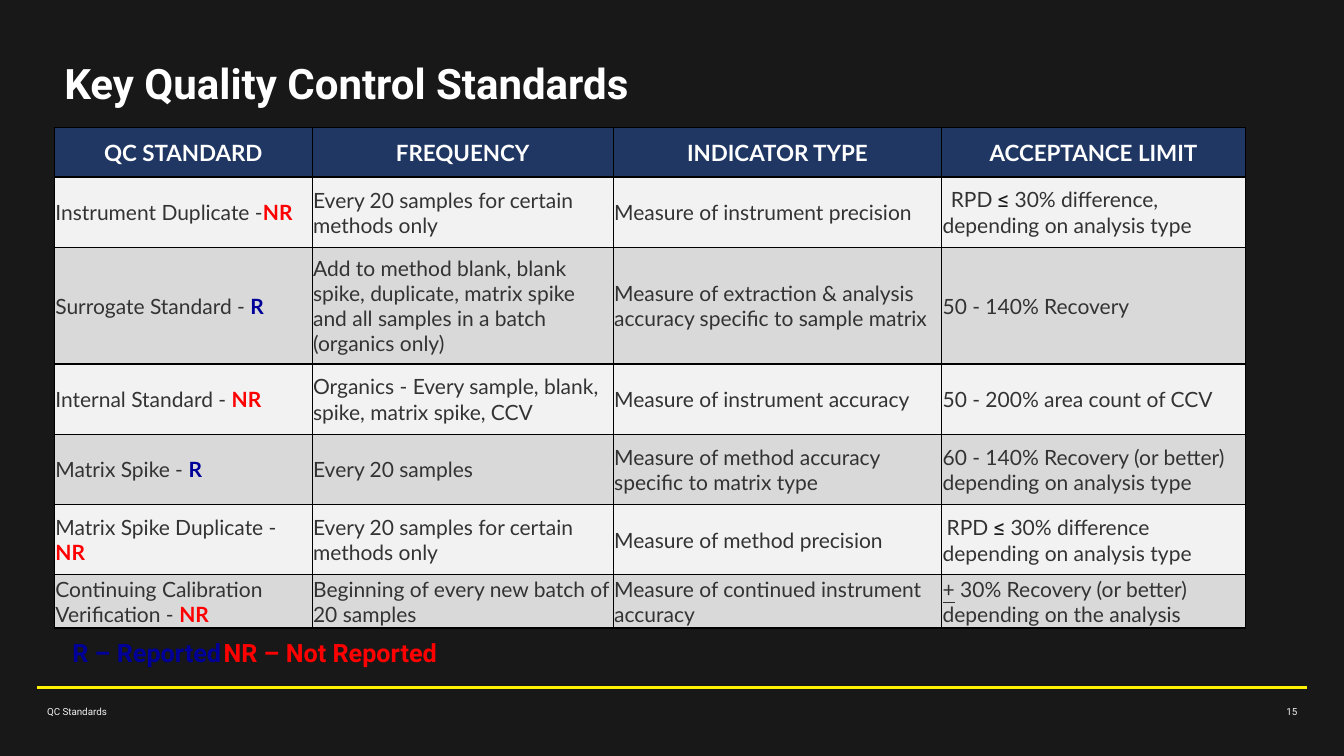
from pptx import Presentation
from pptx.dml.color import RGBColor
from pptx.enum.shapes import MSO_CONNECTOR
from pptx.enum.text import MSO_ANCHOR as Anchor, MSO_AUTO_SIZE as AutoSize, PP_ALIGN as Align
from pptx.oxml.ns import qn
from pptx.util import Pt
from lxml.etree import SubElement

HEADINGS = ["QC STANDARD", "FREQUENCY", "INDICATOR TYPE", "ACCEPTANCE LIMIT"]
COLUMN_WIDTHS = [184.1, 215.1, 234.6, 216.9]
ROW_HEIGHTS = [35.3, 50.2, 83.3, 50.2, 50.2, 50.2, 38.2]

# Text styles
BODY = {"name": "Lato", "size": 15, "bold": False, "color": "333333"}
HEADING = BODY | {"size": 16, "bold": True, "color": "FFFFFF"}
REPORTED = BODY | {"bold": True, "color": "000099"}
NOT_REPORTED = REPORTED | {"color": "FF0000"}
SYMBOL = {"name": "Roboto", "size": 16, "bold": False, "color": "181818"}
UNDERLINED = BODY | {"underline": True}
TITLE = {"name": "Roboto", "size": 30, "bold": True, "color": "FFFFFF"}
FOOTER = {"name": "Roboto", "size": 7, "color": "F2F2F2"}
LEGEND = TITLE | {"size": 18}
STATUS = {"R": REPORTED, "NR": NOT_REPORTED}


def rpd_limit(ending):
    return [("RPD ", BODY), ("≤", SYMBOL), (" 30% difference" + ending, BODY)]


# Standard, status, frequency, indicator, limit runs, first-line indent of the limit
STANDARDS = [
    ("Instrument Duplicate -", "NR", "Every 20 samples for certain methods only",
     "Measure of instrument precision", rpd_limit(", depending on analysis type"), 5.8),
    ("Surrogate Standard - ", "R",
     "Add to method blank, blank spike, duplicate, matrix spike and all samples in a batch (organics only)",
     "Measure of extraction & analysis accuracy specific to sample matrix",
     [("50 - 140% Recovery", BODY)], 0),
    ("Internal Standard - ", "NR", "Organics - Every sample, blank, spike, matrix spike, CCV",
     "Measure of instrument accuracy", [("50 - 200% area count of CCV", BODY)], 0),
    ("Matrix Spike - ", "R", "Every 20 samples",
     "Measure of method accuracy specific to matrix type",
     [("60 - 140% Recovery (or better) depending on analysis type", BODY)], 0),
    ("Matrix Spike Duplicate - ", "NR", "Every 20 samples for certain methods only",
     "Measure of method precision", rpd_limit(" depending on analysis type"), 2.9),
    ("Continuing Calibration Verification - ", "NR", "Beginning of every new batch of 20 samples",
     "Measure of continued instrument accuracy",
     [("+", UNDERLINED), (" 30% Recovery (or better) depending on the analysis", BODY)], 0),
]


def rgb(color):
    return RGBColor.from_string(color)


class SlideBuilder:
    background = "181818"
    accent = "FFF200"
    header_fill = "203764"
    row_fills = ("F2F2F2", "D9D9D9")
    border = "000000"

    def __init__(self, presentation):
        self.slide = presentation.slides.add_slide(presentation.slide_layouts[6])
        fill = self.slide.background.fill
        fill.solid()
        fill.fore_color.rgb = rgb(self.background)

    def add_runs(self, paragraph, runs, indent=0, **settings):
        for key, value in settings.items():
            setattr(paragraph, key, value)
        if indent:
            properties = paragraph._p.get_or_add_pPr()
            properties.set("marL", "0")
            properties.set("indent", str(Pt(indent)))
        for text, style in runs:
            run = paragraph.add_run()
            run.text = text
            for key, value in style.items():
                if key == "color":
                    run.font.color.rgb = rgb(value)
                else:
                    setattr(run.font, key, Pt(value) if key == "size" else value)

    def text(self, left, top, width, height, runs, frame=None, **settings):
        shape = self.slide.shapes.add_textbox(Pt(left), Pt(top), Pt(width), Pt(height))
        text_frame = shape.text_frame
        for key, value in ({"word_wrap": True} | (frame or {})).items():
            setattr(text_frame, key, value)
        self.add_runs(text_frame.paragraphs[0], runs, **settings)

    def rule(self, left, right, top, weight):
        line = self.slide.shapes.add_connector(
            MSO_CONNECTOR.STRAIGHT, Pt(left), Pt(top), Pt(right), Pt(top))
        line.line.color.rgb = rgb(self.accent)
        line.line.width = Pt(weight)
        SubElement(line._element.spPr, qn("a:effectLst"))

    def cell(self, cell, fill, runs, **settings):
        properties = cell._tc.get_or_add_tcPr()
        for side in ("lnL", "lnR", "lnT", "lnB"):
            edge = SubElement(properties, qn("a:" + side), w=str(Pt(1)))
            SubElement(SubElement(edge, qn("a:solidFill")), qn("a:srgbClr"), val=self.border)
        cell.fill.solid()
        cell.fill.fore_color.rgb = rgb(fill)
        layout = {"margin_left": Pt(0.7), "margin_right": Pt(0.7), "margin_top": Pt(0.7),
                  "margin_bottom": 0, "vertical_anchor": Anchor.MIDDLE}
        for key, value in layout.items():
            setattr(cell, key, value)
        self.add_runs(cell.text_frame.paragraphs[0], runs, **settings)

    def table(self, left, top):
        table = self.slide.shapes.add_table(
            len(ROW_HEIGHTS), len(COLUMN_WIDTHS), Pt(left), Pt(top),
            Pt(sum(COLUMN_WIDTHS)), Pt(sum(ROW_HEIGHTS))).table
        table.horz_banding = False
        for column, width in zip(table.columns, COLUMN_WIDTHS):
            column.width = Pt(width)
        for row, height in zip(table.rows, ROW_HEIGHTS):
            row.height = Pt(height)
        for index, heading in enumerate(HEADINGS):
            self.cell(table.cell(0, index), self.header_fill, [(heading, HEADING)],
                      alignment=Align.CENTER)
        for row, (name, status, frequency, indicator, limit, indent) in enumerate(STANDARDS, 1):
            fill = self.row_fills[(row - 1) % 2]
            contents = [[(name, BODY), (status, STATUS[status])],
                        [(frequency, BODY)], [(indicator, BODY)], limit]
            for column, runs in enumerate(contents):
                self.cell(table.cell(row, column), fill, runs,
                          indent=indent if column == 3 else 0)


def main():
    presentation = Presentation()
    presentation.slide_width, presentation.slide_height = Pt(960), Pt(540)
    builder = SlideBuilder(presentation)

    # Footer
    builder.rule(26.6, 933.8, 491, 2.25)
    builder.text(26.6, 500.4, 504.7, 28.8, [("QC Standards", FOOTER)])
    builder.text(717.8, 500.4, 216, 28.8, [("15", FOOTER)], alignment=Align.RIGHT)

    # Title and table
    builder.text(38.9, 41, 838, 41, [("Key Quality Control Standards", TITLE)],
                 {"vertical_anchor": Anchor.MIDDLE}, line_spacing=0.9)
    builder.table(38.9, 91.2)

    # Legend
    builder.text(44.6, 451.4, 313.9, 28.8,
                 [("R – Reported\t", LEGEND | {"color": "000099"}),
                  ("NR – Not Reported", LEGEND | {"color": "FF0000"})],
                 {"word_wrap": False, "auto_size": AutoSize.SHAPE_TO_FIT_TEXT})

    presentation.save("out.pptx")


if __name__ == "__main__":
    main()
